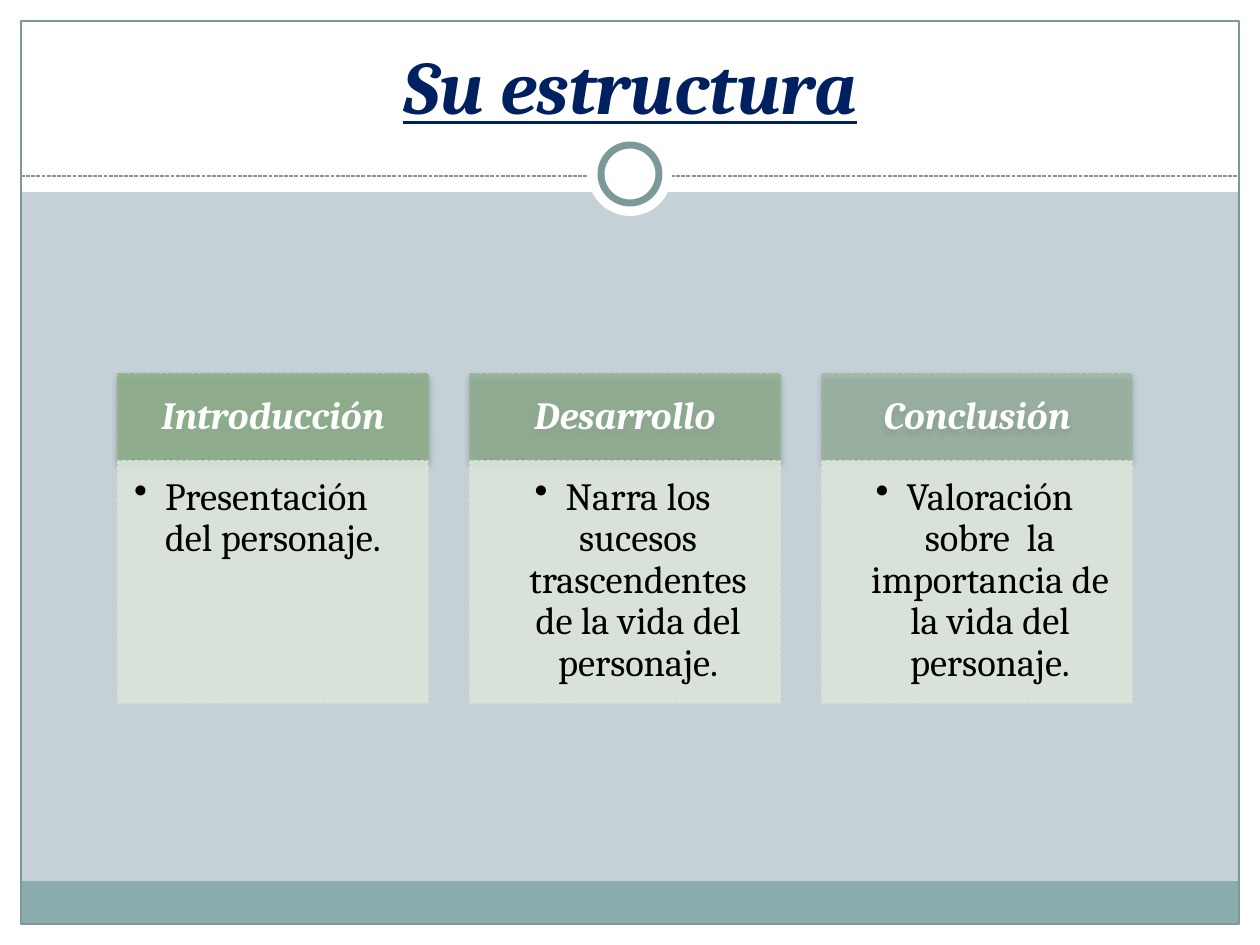
from lxml import etree
from pptx import Presentation
from pptx import util as u
from pptx.dml.color import RGBColor
from pptx.enum import dml, shapes, text
from pptx.oxml.ns import qn

PX = u.Inches(1) / 126
WIDTH, HEIGHT = 1260, 945
FONT = "Cambria"
COLORS = {
    "background": "C5D1D7",
    "white": "FFFFFF",
    "band": "8CADAE",
    "frame": "7C999A",
    "title": "002060",
    "header": "8FB08C",
    "panel": "DBE4DA",
    "black": "000000",
}
COLUMNS = [
    ("Introducción", "Presentación del personaje.", 90, text.PP_ALIGN.LEFT),
    ("Desarrollo", "Narra los sucesos trascendentes de la vida del personaje.",
     70, text.PP_ALIGN.CENTER),
    ("Conclusión", "Valoración sobre  la importancia de la vida del personaje.",
     50, text.PP_ALIGN.CENTER),
]


def px(length):
    return u.Emu(round(length * PX))


def color(name):
    return RGBColor.from_string(COLORS[name])


def style_line(line, name, width, dashed=False):
    line.color.rgb = color(name)
    line.width = u.Pt(width)
    if dashed:
        line.dash_style = dml.MSO_LINE.SQUARE_DOT


def add_box(parent, box, fill=None, line=None, width=0.75, dashed=False,
            kind=shapes.MSO_SHAPE.RECTANGLE):
    shape = parent.add_shape(kind, *map(px, box))
    shape.shadow.inherit = False
    if fill:
        shape.fill.solid()
        shape.fill.fore_color.rgb = color(fill)
    else:
        shape.fill.background()
    if line:
        style_line(shape.line, line, width, dashed)
    else:
        shape.line.fill.background()
    return shape


def add_circle(parent, center, radius, **style):
    x, y = center
    box = (x - radius, y - radius, 2 * radius, 2 * radius)
    return add_box(parent, box, kind=shapes.MSO_SHAPE.OVAL, **style)


def set_opacity(shape, percent):
    """Apply one opacity to both the fill and the outline."""
    for node in shape.element.spPr.iter(qn("a:srgbClr")):
        etree.SubElement(node, qn("a:alpha"), val=str(percent * 1000))


def add_drop_shadow(shape):
    effects = shape.element.spPr.find(qn("a:effectLst"))
    shadow = etree.SubElement(
        effects, qn("a:outerShdw"), blurRad=str(u.Pt(4)), dist=str(u.Pt(2)),
        dir="5400000", algn="ctr", rotWithShape="0")
    tint = etree.SubElement(shadow, qn("a:srgbClr"), val=COLORS["black"])
    etree.SubElement(tint, qn("a:alpha"), val="35000")


def add_bullet(paragraph, indent):
    properties = paragraph._p.get_or_add_pPr()
    properties.set("marL", str(px(indent)))
    properties.set("indent", str(-px(indent)))
    etree.SubElement(properties, qn("a:buChar"), char="•")


def write(shape, content, size=22, fill="black", bold=False, italic=False,
          underline=False, align=text.PP_ALIGN.CENTER,
          anchor=text.MSO_ANCHOR.MIDDLE, insets=(13, 6, 13, 6), spacing=1.0):
    frame = shape.text_frame
    frame.word_wrap = True
    frame.auto_size = text.MSO_AUTO_SIZE.NONE
    frame.vertical_anchor = anchor
    (frame.margin_left, frame.margin_top,
     frame.margin_right, frame.margin_bottom) = map(px, insets)
    paragraph = frame.paragraphs[0]
    paragraph.alignment = align
    paragraph.line_spacing = spacing
    run = paragraph.add_run()
    run.text = content
    font = run.font
    font.name, font.size, font.color.rgb = FONT, u.Pt(size), color(fill)
    font.bold, font.italic, font.underline = bold, italic, underline
    return paragraph


def draw_frame(slide, box):
    """White margins, bottom band, border, dashed rule and ring."""
    left, top, width, height = box
    margin, rule_y = 21, top + 176
    inner_width = width - 2 * margin
    right, bottom = left + width - margin, top + height - margin
    for margin_box in [
        (left, bottom, width, margin),
        (left, top, width, 192),
        (left, top, margin, height),
        (right, top, margin, height),
    ]:
        add_box(slide.shapes, margin_box, fill="white")
    add_box(slide.shapes, (left + margin, bottom - 43, inner_width, 43), fill="band")
    add_box(slide.shapes, (left + margin, top + margin, inner_width,
                           height - 2 * margin), line="frame")

    rule = slide.shapes.add_connector(
        shapes.MSO_CONNECTOR.STRAIGHT,
        px(left + margin), px(rule_y), px(right), px(rule_y))
    style_line(rule.line, "frame", 0.75, dashed=True)
    etree.SubElement(rule.element.spPr, qn("a:effectLst"))

    center = (left + width / 2, rule_y - 2)
    add_circle(slide.shapes, center, 42, fill="white")
    add_circle(slide.shapes, center, 29, fill="white", line="frame", width=4)


def place_title(slide, box, content):
    title = slide.shapes.title
    title.left, title.top, title.width, title.height = map(px, box)
    write(title, content, size=43.2, fill="title", bold=True, italic=True,
          underline=True, anchor=text.MSO_ANCHOR.BOTTOM)
    # The title is created first, so bring it in front of the frame.
    title.element.getparent().append(title.element)


def draw_column(parent, box, heading, detail, opacity, align):
    left, top, width, height = box
    header_height = 87
    header = add_box(parent, (left, top, width, header_height), fill="header",
                     line="header", width=0.9, dashed=True)
    set_opacity(header, opacity)
    add_drop_shadow(header)
    write(header, heading, fill="white", bold=True, italic=True,
          insets=(21, 13, 21, 13), spacing=0.9)

    panel = add_box(parent, (left, top + header_height, width, height - header_height),
                    fill="panel", line="panel", width=0.9, dashed=True)
    set_opacity(panel, 90)
    paragraph = write(panel, detail, align=align, anchor=text.MSO_ANCHOR.TOP,
                      insets=(16, 16, 21, 24), spacing=0.9)
    add_bullet(paragraph, 31)


def draw_columns(slide, box, columns):
    left, top, width, height = box
    column_width = 310
    pitch = (width - column_width) / (len(columns) - 1)
    group = slide.shapes.add_group_shape()
    for index, column in enumerate(columns):
        draw_column(group.shapes, (left + index * pitch, top, column_width, height),
                    *column)


def main():
    presentation = Presentation()
    presentation.slide_width, presentation.slide_height = px(WIDTH), px(HEIGHT)
    slide = presentation.slides.add_slide(
        presentation.slide_layouts.get_by_name("Title Only"))
    slide.background.fill.solid()
    slide.background.fill.fore_color.rgb = color("background")

    draw_frame(slide, (0, 0, WIDTH, HEIGHT))
    place_title(slide, (42, 32, 1176, 104), "Su estructura")
    draw_columns(slide, (118, 374, 1014, 329), COLUMNS)
    presentation.save("out.pptx")


if __name__ == "__main__":
    main()
